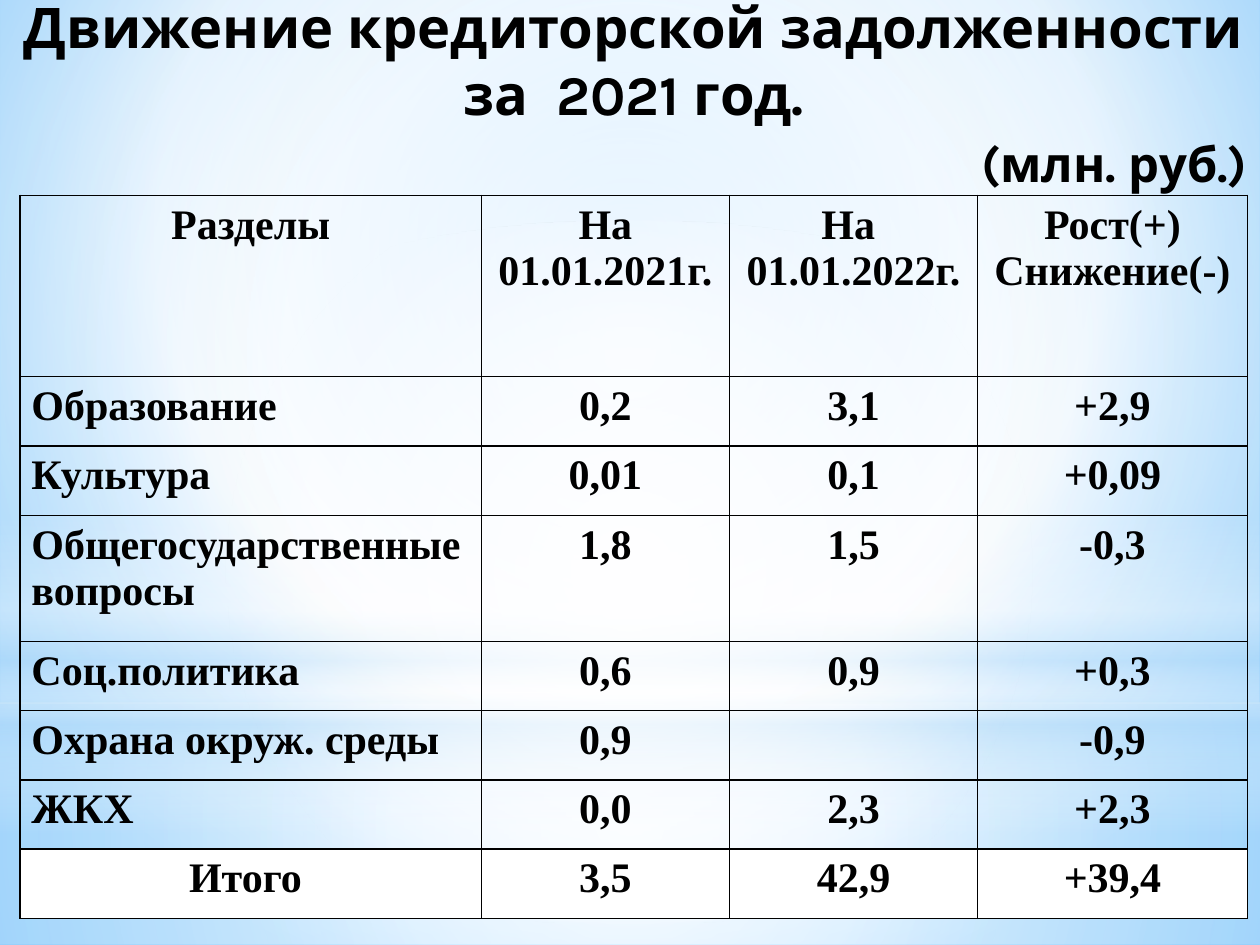
from lxml import etree
from pptx import Presentation
from pptx.dml.color import RGBColor
from pptx.enum.shapes import MSO_SHAPE
from pptx.enum.text import MSO_ANCHOR, PP_ALIGN
from pptx.oxml.ns import qn
from pptx.util import Inches, Pt

LEFT, CENTER, RIGHT = PP_ALIGN.LEFT, PP_ALIGN.CENTER, PP_ALIGN.RIGHT
TOP = MSO_ANCHOR.TOP
RECTANGLE, OVAL = MSO_SHAPE.RECTANGLE, MSO_SHAPE.OVAL
COLORS = {"text": "000000", "white": "FFFFFF", "haze": "B4DCFA",
          "sky": "9ED5FF", "edge": "5BB9FF"}
MIDDLE = (50, 50, 50, 50)


def add_text(frame, text, size, font, align=CENTER, before=0):
    """Write one bold paragraph per line of text, after any text already there."""
    for line in text.split("\n"):
        para = frame.add_paragraph() if frame.text else frame.paragraphs[0]
        para.alignment = align
        para.space_before = Pt(before)
        span = para.add_run()
        span.text = line
        span.font.size = Pt(size)
        span.font.name = font
        span.font.bold = True
        span.font.color.rgb = RGBColor.from_string(COLORS["text"])


def set_gradient(owner, element, stops, focus=None):
    """Fill with (position, colour, opacity) stops, round a focus or downwards."""
    owner.fill.gradient()
    gradient = element.find(".//" + qn("a:gradFill"))
    for child in list(gradient):
        gradient.remove(child)
    stop_list = etree.SubElement(gradient, qn("a:gsLst"))
    for position, color, opacity in stops:
        stop = etree.SubElement(stop_list, qn("a:gs"), pos=str(position * 1000))
        tint = etree.SubElement(stop, qn("a:srgbClr"), val=COLORS[color])
        if opacity < 100:
            etree.SubElement(tint, qn("a:alpha"), val=str(opacity * 1000))
    if focus:
        spread = etree.SubElement(gradient, qn("a:path"))
        spread.set("path", "circle")
        sides = {side: str(value * 1000) for side, value in zip("ltrb", focus)}
        etree.SubElement(spread, qn("a:fillToRect"), **sides)
    else:
        etree.SubElement(gradient, qn("a:lin"), ang="5400000", scaled="0")


deck = Presentation()
deck.slide_width, deck.slide_height = Inches(10), Inches(7.5)
page = deck.slides.add_slide(deck.slide_layouts[6])

# Sky background
set_gradient(page.background, page.element,
             [(0, "sky", 100), (60, "white", 100), (100, "edge", 100)],
             (20, 10, 20, 60))

# Translucent haze layers: preset, top, height, stops, focus
layers = [
    (RECTANGLE, 5.58, 1.92,
     [(0, "white", 91), (37, "white", 76), (100, "haze", 79)], MIDDLE),
    (RECTANGLE, 0, 5.58,
     [(0, "white", 89), (48, "white", 62), (100, "haze", 79)], MIDDLE),
    (RECTANGLE, 4.12, 2.5,
     [(0, "white", 0), (29, "white", 30), (45, "haze", 40),
      (55, "white", 26), (65, "haze", 60), (100, "white", 0)], None),
    (OVAL, 1.75, 5.58, [(0, "white", 100), (56, "white", 0)], MIDDLE),
]
for preset, top, height, stops, focus in layers:
    layer = page.shapes.add_shape(preset, 0, Inches(top), Inches(10), Inches(height))
    layer.shadow.inherit = False
    layer.line.fill.background()
    set_gradient(layer, layer.element, stops, focus)

# Title and unit
box = page.shapes.add_textbox(Inches(0.06), Inches(-0.11), Inches(9.94), Inches(2.26))
box.text_frame.word_wrap = True
box.text_frame.vertical_anchor = TOP
add_text(box.text_frame, "Движение кредиторской задолженности\nза  2021 год.", 32, "Karla")
add_text(box.text_frame, "(млн. руб.)", 28, "Karla", align=RIGHT, before=4)

# Debt table
rows = [
    ("Разделы", "На\n01.01.2021г.", "На \n01.01.2022г.", "Рост(+)\nСнижение(-)"),
    ("Образование", "0,2", "3,1", "+2,9"),
    ("Культура", "0,01", "0,1", "+0,09"),
    ("Общегосударственные вопросы", "1,8", "1,5", "-0,3"),
    ("Соц.политика", "0,6", "0,9", "+0,3"),
    ("Охрана окруж. среды", "0,9", "", "-0,9"),
    ("ЖКХ", "0,0", "2,3", "+2,3"),
    ("Итого ", "3,5", "42,9", "+39,4"),
]
widths = [3.66, 1.97, 1.97, 2.14]
heights = [1.44, 0.55, 0.55, 1, 0.55, 0.55, 0.55, 0.55]
last = len(rows) - 1
table = page.shapes.add_table(len(rows), len(widths), Inches(0.16), Inches(1.55),
                              Inches(sum(widths)), Inches(sum(heights))).table
for column, width in zip(table.columns, widths):
    column.width = Inches(width)
for row, height in zip(table.rows, heights):
    row.height = Inches(height)

for r, values in enumerate(rows):
    for c, value in enumerate(values):
        cell = table.cell(r, c)
        cell.margin_left = cell.margin_right = Inches(0.09)
        cell.margin_top = cell.margin_bottom = Inches(0.05)
        if value:
            align = LEFT if c == 0 and 0 < r < last else CENTER
            add_text(cell.text_frame, value, 24, "Times New Roman", align=align)

        # Borders come before the fill in the cell properties
        properties = cell._tc.get_or_add_tcPr()
        for side in ("a:lnL", "a:lnR", "a:lnT", "a:lnB"):
            border = etree.SubElement(properties, qn(side), w=str(Pt(1)))
            ink = etree.SubElement(border, qn("a:solidFill"))
            etree.SubElement(ink, qn("a:srgbClr"), val=COLORS["text"])
        if r == last:
            cell.fill.solid()
            cell.fill.fore_color.rgb = RGBColor.from_string(COLORS["white"])
        else:
            cell.fill.background()

deck.save("out.pptx")
